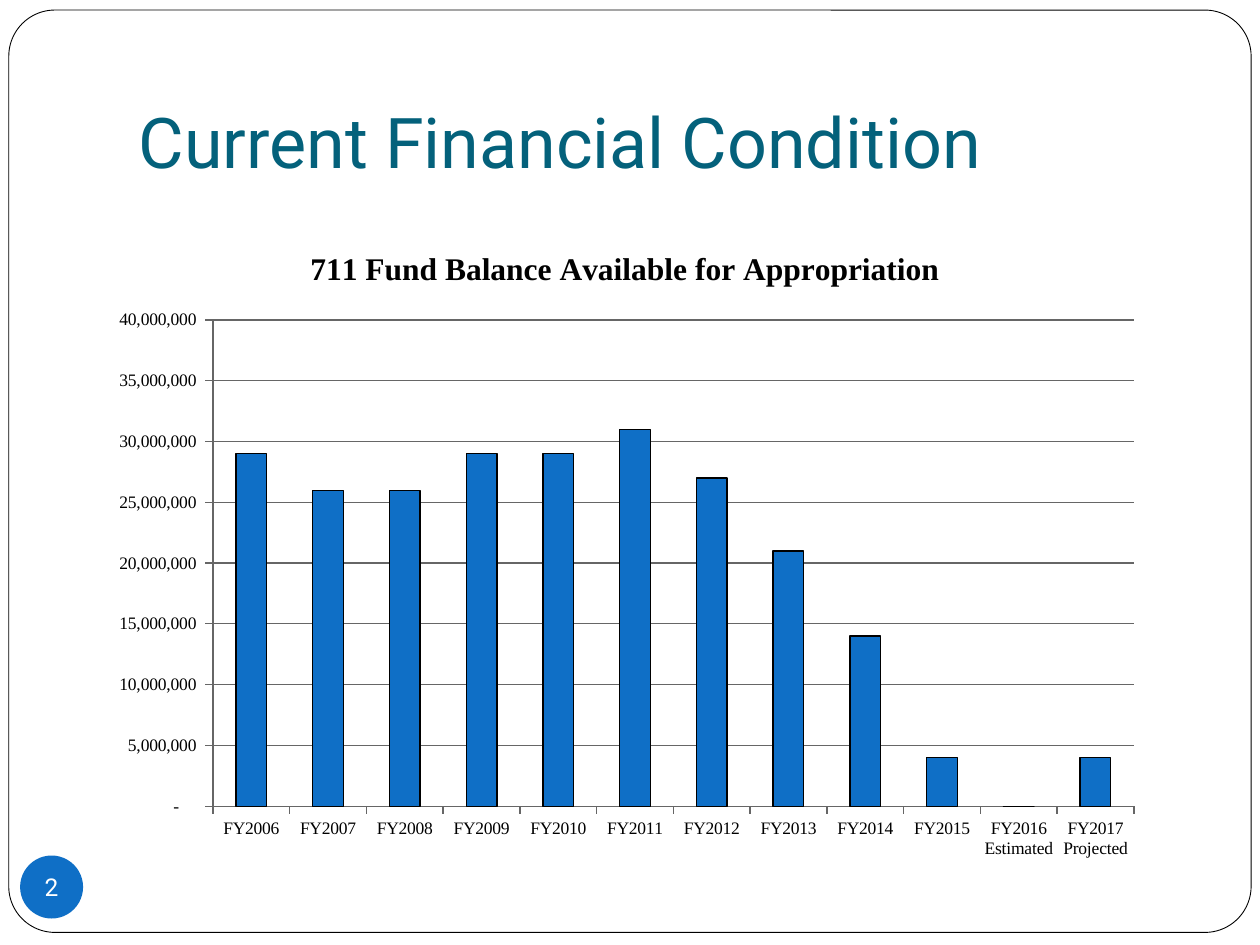
from dataclasses import dataclass

from lxml.etree import fromstring
from pptx import Presentation
from pptx.chart.data import CategoryChartData
from pptx.dml.color import RGBColor
from pptx.enum.chart import XL_CHART_TYPE, XL_TICK_MARK
from pptx.enum.shapes import MSO_SHAPE
from pptx.enum.text import MSO_ANCHOR, PP_ALIGN
from pptx.oxml.ns import nsdecls
from pptx.util import Inches, Pt


@dataclass(frozen=True)
class Theme:
    white: RGBColor = RGBColor(0xFF, 0xFF, 0xFF)
    black: RGBColor = RGBColor(0, 0, 0)
    gray: RGBColor = RGBColor(0x66, 0x66, 0x66)
    teal: RGBColor = RGBColor(0x04, 0x61, 0x7B)
    blue: RGBColor = RGBColor(0x0F, 0x6F, 0xC6)
    yellow: RGBColor = RGBColor(0xFF, 0xFF, 0)
    slide_font: str = "Roboto"
    chart_font: str = "Times New Roman"
    title_size: Pt = Pt(40)
    number_size: Pt = Pt(14)
    chart_title_size: Pt = Pt(18)
    chart_size: Pt = Pt(10)


@dataclass(frozen=True)
class Area:
    """A rectangle in inches."""
    left: float
    top: float
    width: float
    height: float


@dataclass(frozen=True)
class Balance:
    year: str
    millions: int
    color: RGBColor


THEME = Theme()
CHART_AREA = Area(0.75, 1.78, 8.42, 5.13)
PLOT_AREA = Area(1.69, 2.54, 7.31, 3.86)
BALANCES = [
    Balance("FY2006", 29, THEME.blue),
    Balance("FY2007", 26, THEME.blue),
    Balance("FY2008", 26, THEME.blue),
    Balance("FY2009", 29, THEME.blue),
    Balance("FY2010", 29, THEME.blue),
    Balance("FY2011", 31, THEME.blue),
    Balance("FY2012", 27, THEME.blue),
    Balance("FY2013", 21, THEME.blue),
    Balance("FY2014", 14, THEME.blue),
    Balance("FY2015", 4, THEME.blue),
    Balance("FY2016 Estimated", 0, THEME.yellow),
    Balance("FY2017 Projected", 4, THEME.blue),
]
NUMBER_FORMAT = r'_(* #,##0_);_(* \(#,##0\);_(* "-"??_);_(@_)'


def set_font(font, name: str, size: Pt, color: RGBColor, bold: bool = False) -> None:
    font.name, font.size, font.bold = name, size, bold
    font.color.rgb = color


def set_margins(frame, left: float, top: float, right: float, bottom: float) -> None:
    frame.margin_left, frame.margin_top = Inches(left), Inches(top)
    frame.margin_right, frame.margin_bottom = Inches(right), Inches(bottom)


def add_frame(page) -> None:
    """Put the rounded page border behind everything else."""
    frame = page.shapes.add_shape(
        MSO_SHAPE.ROUNDED_RECTANGLE, Inches(0.07), Inches(0.08), Inches(9.86), Inches(7.32))
    frame.adjustments[0] = 0.05
    frame.shadow.inherit = False
    frame.fill.solid()
    frame.fill.fore_color.rgb = THEME.white
    frame.line.color.rgb = THEME.black
    frame.line.width = Pt(0.5)
    page.shapes.element.insert(2, frame.element)


def format_title(page, text: str) -> None:
    title = page.shapes.title
    title.left, title.top = Inches(1), Inches(0.3)
    title.width, title.height = Inches(8.5), Inches(1.25)
    frame = title.text_frame
    frame.text = text
    frame.vertical_anchor = MSO_ANCHOR.BOTTOM
    set_margins(frame, 0.1, 0.05, 0.1, 0.1)
    para = frame.paragraphs[0]
    para.alignment = PP_ALIGN.LEFT
    set_font(para.font, THEME.slide_font, THEME.title_size, THEME.teal)


def style_axis(axis) -> None:
    axis.major_tick_mark = XL_TICK_MARK.OUTSIDE
    axis.minor_tick_mark = XL_TICK_MARK.NONE
    axis.format.line.color.rgb = THEME.gray
    axis.format.line.width = Pt(0.75)


def place_plot(chart, outer: Area, inner: Area) -> None:
    """Fix the inner plot area as fractions of the chart."""
    fractions = {
        "x": (inner.left - outer.left) / outer.width,
        "y": (inner.top - outer.top) / outer.height,
        "w": inner.width / outer.width,
        "h": inner.height / outer.height,
    }
    sizes = "".join(f'<c:{name} val="{value:.4f}"/>' for name, value in fractions.items())
    plot_area = chart.plots[0]._element.getparent()
    for old in plot_area.findall("{*}layout"):
        plot_area.remove(old)
    plot_area.insert(0, fromstring(
        f'<c:layout {nsdecls("c")}><c:manualLayout><c:layoutTarget val="inner"/>'
        f'<c:xMode val="edge"/><c:yMode val="edge"/>{sizes}</c:manualLayout></c:layout>'))


def add_balance_chart(page, balances: list[Balance]) -> None:
    data = CategoryChartData(number_format=NUMBER_FORMAT)
    data.categories = [balance.year for balance in balances]
    data.add_series("Series 1", [balance.millions * 1_000_000 for balance in balances])
    chart = page.shapes.add_chart(
        XL_CHART_TYPE.COLUMN_CLUSTERED, Inches(CHART_AREA.left), Inches(CHART_AREA.top),
        Inches(CHART_AREA.width), Inches(CHART_AREA.height), data).chart
    set_font(chart.font, THEME.chart_font, THEME.chart_size, THEME.black)
    chart.has_legend = False

    chart.has_title = True
    chart.chart_title.include_in_layout = False
    chart.chart_title.text_frame.text = "711 Fund Balance Available for Appropriation"
    set_font(chart.chart_title.text_frame.paragraphs[0].font,
             THEME.chart_font, THEME.chart_title_size, THEME.black, bold=True)

    style_axis(chart.category_axis)
    values = chart.value_axis
    style_axis(values)
    values.minimum_scale, values.maximum_scale = 0, 40_000_000
    values.major_unit = 5_000_000
    values.tick_labels.number_format = NUMBER_FORMAT
    values.tick_labels.number_format_is_linked = False
    values.has_major_gridlines = True
    values.major_gridlines.format.line.color.rgb = THEME.gray
    values.major_gridlines.format.line.width = Pt(0.75)

    plot = chart.plots[0]
    plot.vary_by_categories = False
    plot.gap_width = 150
    series = plot.series[0]
    bars = [(series, THEME.blue)]
    bars += [(series.points[index], balance.color)
             for index, balance in enumerate(balances) if balance.color != THEME.blue]
    for bar, color in bars:
        bar.format.fill.solid()
        bar.format.fill.fore_color.rgb = color
        bar.format.line.color.rgb = THEME.black
        bar.format.line.width = Pt(0.75)
    place_plot(chart, CHART_AREA, PLOT_AREA)


def add_page_number(page, number: int) -> None:
    badge = page.shapes.add_shape(
        MSO_SHAPE.OVAL, Inches(0.16), Inches(6.79), Inches(0.5), Inches(0.5))
    badge.shadow.inherit = False
    badge.fill.solid()
    badge.fill.fore_color.rgb = THEME.blue
    badge.line.fill.background()
    frame = badge.text_frame
    frame.text = str(number)
    frame.word_wrap = False
    frame.vertical_anchor = MSO_ANCHOR.MIDDLE
    set_margins(frame, 0, 0, 0, 0)
    para = frame.paragraphs[0]
    para.alignment = PP_ALIGN.CENTER
    set_font(para.font, THEME.slide_font, THEME.number_size, THEME.white)


def main() -> None:
    deck = Presentation()
    deck.slide_width, deck.slide_height = Inches(10), Inches(7.5)
    page = deck.slides.add_slide(deck.slide_layouts.get_by_name("Title Only"))
    add_frame(page)
    format_title(page, "Current Financial Condition")
    add_balance_chart(page, BALANCES)
    add_page_number(page, 2)
    deck.save("out.pptx")


if __name__ == "__main__":
    main()
